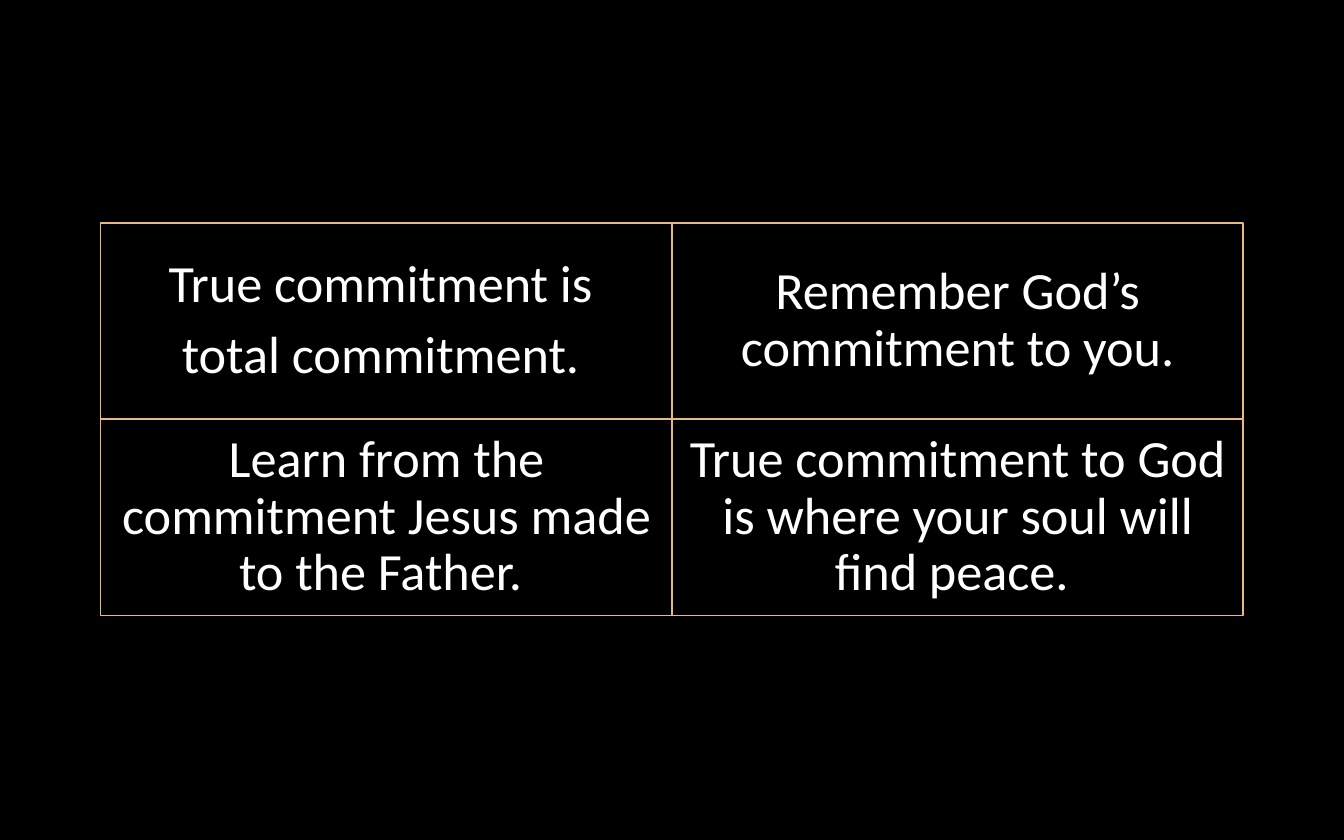
from pptx import Presentation
from pptx.dml.color import RGBColor
from pptx.enum.shapes import MSO_SHAPE
from pptx.enum.text import MSO_ANCHOR, PP_ALIGN
from pptx.util import Pt

RECTANGLE = MSO_SHAPE.RECTANGLE
MIDDLE = MSO_ANCHOR.MIDDLE
CENTER = PP_ALIGN.CENTER

BLACK = RGBColor(0x00, 0x00, 0x00)
WHITE = RGBColor(0xFF, 0xFF, 0xFF)
GOLD = RGBColor(0xE6, 0xBA, 0x82)

STATEMENTS = [
    ["True commitment is \ntotal commitment. ", "Remember God’s commitment to you."],
    [
        "Learn from the commitment Jesus made to the Father. ",
        "True commitment to God is where your soul will find peace. ",
    ],
]

SLIDE_WIDTH, SLIDE_HEIGHT = 720, 450
GRID_LEFT, GRID_TOP = 54, 119.4
CELL_WIDTH, CELL_HEIGHT = 306, 105.2


def add_statement(slide, text, row, column):
    shape = slide.shapes.add_shape(
        RECTANGLE,
        Pt(GRID_LEFT + column * CELL_WIDTH),
        Pt(GRID_TOP + row * CELL_HEIGHT),
        Pt(CELL_WIDTH),
        Pt(CELL_HEIGHT),
    )
    shape.shadow.inherit = False
    shape.fill.background()
    shape.line.color.rgb = GOLD
    shape.line.width = Pt(0.75)

    text_frame = shape.text_frame
    text_frame.word_wrap = True
    text_frame.vertical_anchor = MIDDLE
    text_frame.text = text
    for paragraph in text_frame.paragraphs:
        paragraph.alignment = CENTER
        paragraph.line_spacing = 0.9
        paragraph.space_before = Pt(7.5)
        for run in paragraph.runs:
            run.font.name = "Calibri"
            run.font.size = Pt(28)
            run.font.color.rgb = WHITE


def main():
    presentation = Presentation()
    presentation.slide_width = Pt(SLIDE_WIDTH)
    presentation.slide_height = Pt(SLIDE_HEIGHT)
    slide = presentation.slides.add_slide(presentation.slide_layouts[6])
    slide.background.fill.solid()
    slide.background.fill.fore_color.rgb = BLACK

    for row, statements in enumerate(STATEMENTS):
        for column, text in enumerate(statements):
            add_statement(slide, text, row, column)

    presentation.save("out.pptx")


if __name__ == "__main__":
    main()
